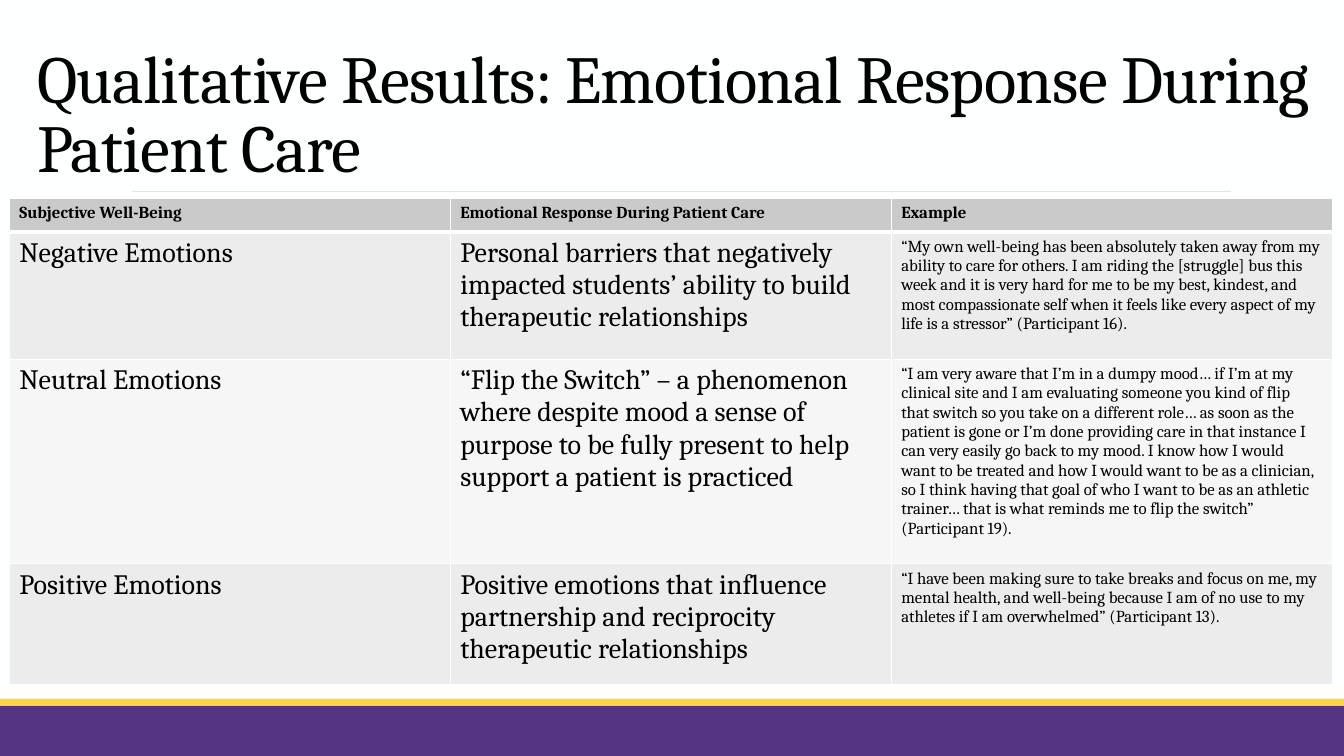
import pptx
import pptx.util
import pptx.dml.color
import pptx.enum.shapes
import pptx.enum.text
import pptx.oxml
import pptx.oxml.ns

Pt = pptx.util.Pt
RGBColor = pptx.dml.color.RGBColor

PAPER = RGBColor(0xFE, 0xFF, 0xFF)
INK = RGBColor(0, 0, 0)
PURPLE = RGBColor(0x53, 0x33, 0x82)
GOLD = RGBColor(0xFF, 0xD5, 0x47)
RULE = RGBColor(0xE4, 0xE4, 0xE4)
HEADER = RGBColor(0xCA, 0xCA, 0xCA)
ODD_ROW = RGBColor(0xEC, 0xEC, 0xEC)
EVEN_ROW = RGBColor(0xF6, 0xF6, 0xF6)

WIDTH, HEIGHT = 960, 540
TITLE = "Qualitative Results: Emotional Response During Patient Care"
FINDINGS = [
    ("Subjective Well-Being", "Emotional Response During Patient Care", "Example"),
    (
        "Negative Emotions",
        "Personal barriers that negatively impacted students’ ability to build therapeutic relationships",
        "“My own well-being has been absolutely taken away from my ability to care for others. "
        "I am riding the [struggle] bus this week and it is very hard for me to be my best, kindest, "
        "and most compassionate self when it feels like every aspect of my life is a stressor” "
        "(Participant 16).",
    ),
    (
        "Neutral Emotions",
        "“Flip the Switch” – a phenomenon where despite mood a sense of purpose to be fully present "
        "to help support a patient is practiced",
        "“I am very aware that I’m in a dumpy mood… if I’m at my clinical site and I am evaluating "
        "someone you kind of flip that switch so you take on a different role… as soon as the patient "
        "is gone or I’m done providing care in that instance I can very easily go back to my mood. "
        "I know how I would want to be treated and how I would want to be as a clinician, so I think "
        "having that goal of who I want to be as an athletic trainer… that is what reminds me to flip "
        "the switch” (Participant 19).",
    ),
    (
        "Positive Emotions",
        "Positive emotions that influence partnership and reciprocity therapeutic relationships",
        "“I have been making sure to take breaks and focus on me, my mental health, and well-being "
        "because I am of no use to my athletes if I am overwhelmed” (Participant 13).",
    ),
]
ROW_HEIGHTS = [24.2, 91, 146, 86.6]


def apply(target, formats):
    for attribute, value in formats.items():
        setattr(target, attribute, value)


def format_font(run, size, bold=False):
    apply(run.font, {"name": "Cambria", "size": Pt(size), "bold": bold})
    run.font.color.rgb = INK


def add_band(slide, left, top, width, height, color):
    band = slide.shapes.add_shape(
        pptx.enum.shapes.MSO_SHAPE.RECTANGLE, Pt(left), Pt(top), Pt(width), Pt(height)
    )
    band.shadow.inherit = False
    band.fill.solid()
    band.fill.fore_color.rgb = color
    band.line.fill.background()


def add_footer(slide, left, top, width, height):
    stripe = 5
    add_band(slide, left, top + stripe, width, height - stripe, PURPLE)
    add_band(slide, left, top, width, stripe, GOLD)


def add_title(slide, left, top, width, height):
    bottom = Pt(top + height)
    rule = slide.shapes.add_connector(
        pptx.enum.shapes.MSO_CONNECTOR.STRAIGHT,
        Pt(left + 75), bottom, Pt(left + width - 65.5), bottom,
    )
    apply(rule.line, {"width": Pt(0.5)})
    rule.line.color.rgb = RULE
    properties = rule._element.spPr
    properties.append(properties.makeelement(pptx.oxml.ns.qn("a:effectLst"), {}))

    title = slide.shapes.title
    apply(title, {"left": Pt(left), "top": Pt(top), "width": Pt(width), "height": Pt(height)})
    apply(title.text_frame, {
        "text": TITLE,
        "word_wrap": True,
        "auto_size": pptx.enum.text.MSO_AUTO_SIZE.NONE,
        "vertical_anchor": pptx.enum.text.MSO_ANCHOR.BOTTOM,
    })
    heading = title.text_frame.paragraphs[0]
    apply(heading, {"alignment": pptx.enum.text.PP_ALIGN.LEFT, "line_spacing": 0.85})
    format_font(heading.runs[0], 48)
    heading.runs[0]._r.get_or_add_rPr().set("spc", "-50")


def add_borders(cell, weights):
    properties = cell._tc.get_or_add_tcPr()
    for side, weight in weights.items():
        properties.append(pptx.oxml.parse_xml(
            f'<a:ln{side} {pptx.oxml.ns.nsdecls("a")} w="{Pt(weight)}">'
            f'<a:solidFill><a:srgbClr val="{PAPER}"/></a:solidFill></a:ln{side}>'
        ))


def add_findings(slide, left, top, width, height):
    rows, columns = len(FINDINGS), len(FINDINGS[0])
    table = slide.shapes.add_table(
        rows, columns, Pt(left), Pt(top), Pt(width), Pt(height)
    ).table
    for column in table.columns:
        column.width = Pt(width / columns)
    for row, finding in enumerate(FINDINGS):
        table.rows[row].height = Pt(ROW_HEIGHTS[row])
        is_header = row == 0
        shade = HEADER if is_header else ODD_ROW if row % 2 else EVEN_ROW
        for column, wording in enumerate(finding):
            cell = table.cell(row, column)
            cell.text = wording
            is_small = is_header or column == columns - 1
            format_font(cell.text_frame.paragraphs[0].runs[0], 12 if is_small else 20, is_header)
            add_borders(cell, {
                "L": 1, "R": 1, "T": 3 if row == 1 else 1, "B": 3 if is_header else 1,
            })
            cell.fill.solid()
            cell.fill.fore_color.rgb = shade


def build_results_slide(deck):
    slide = deck.slides.add_slide(deck.slide_layouts[5])
    slide.background.fill.solid()
    slide.background.fill.fore_color.rgb = PAPER
    add_footer(slide, 0, 499, WIDTH, HEIGHT - 499)
    add_title(slide, 19.4, 22.3, 925.2, 114.3)
    add_findings(slide, 6.6, 141.6, 945, sum(ROW_HEIGHTS))


def main():
    deck = pptx.Presentation()
    apply(deck, {"slide_width": Pt(WIDTH), "slide_height": Pt(HEIGHT)})
    build_results_slide(deck)
    deck.save("out.pptx")


if __name__ == "__main__":
    main()
